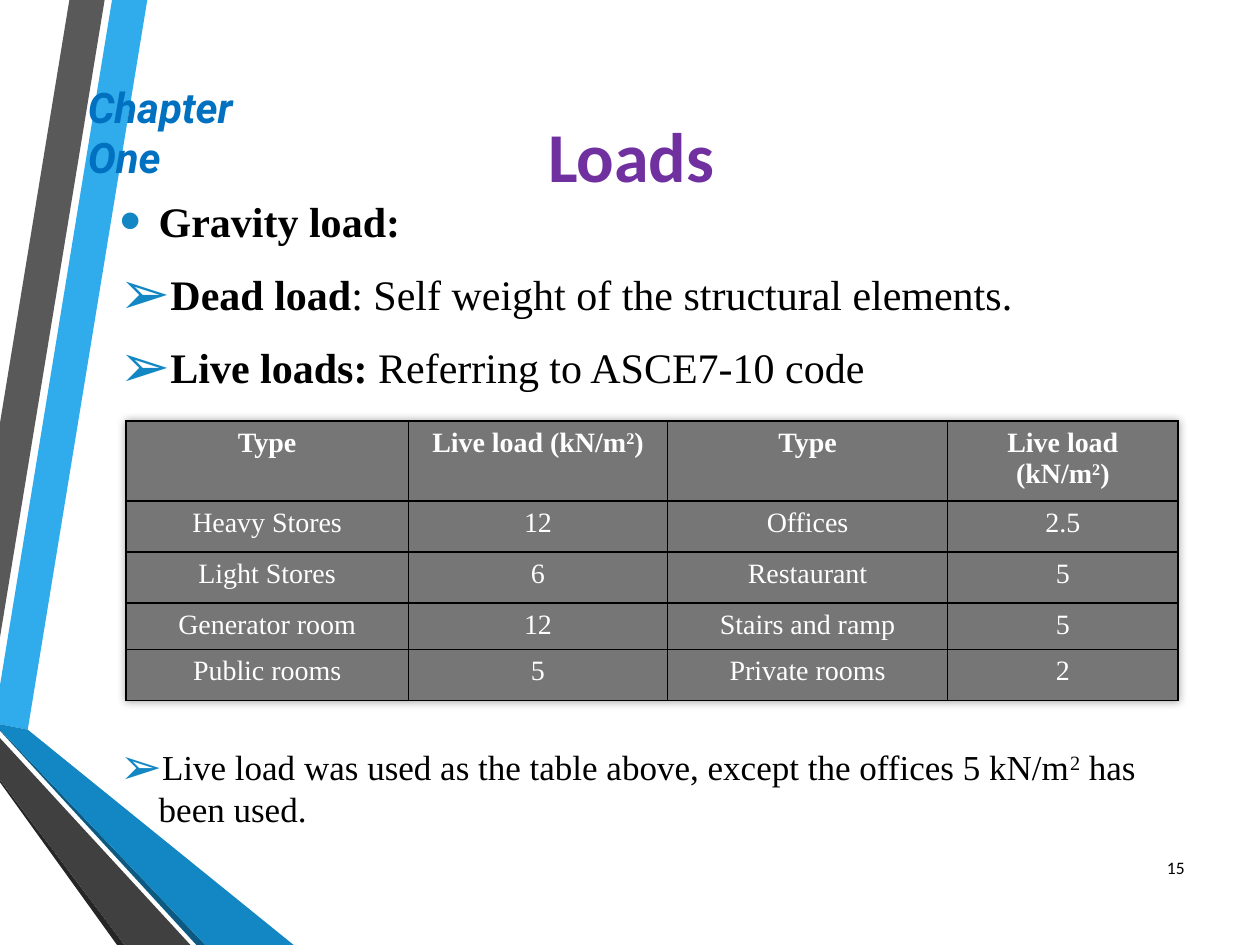
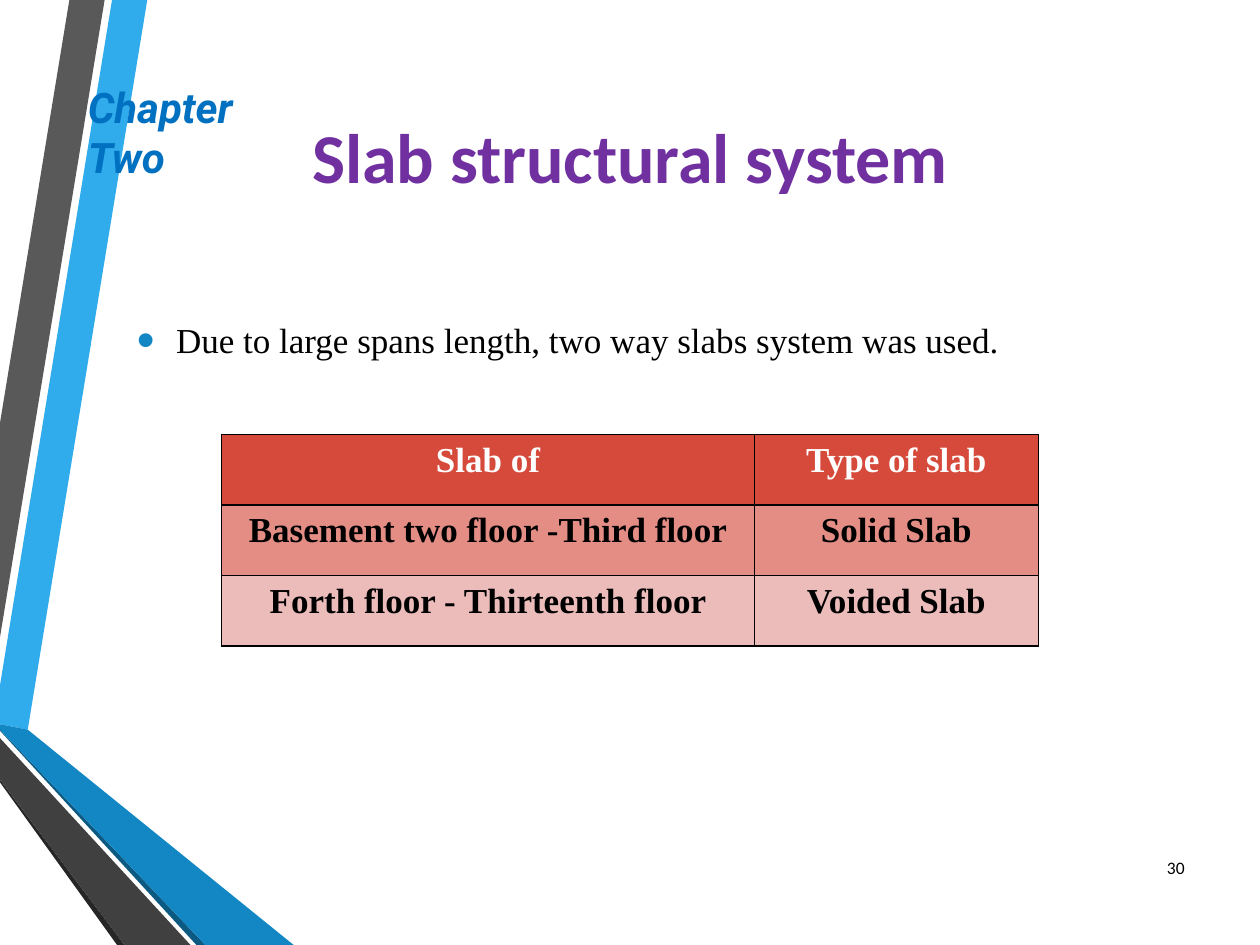
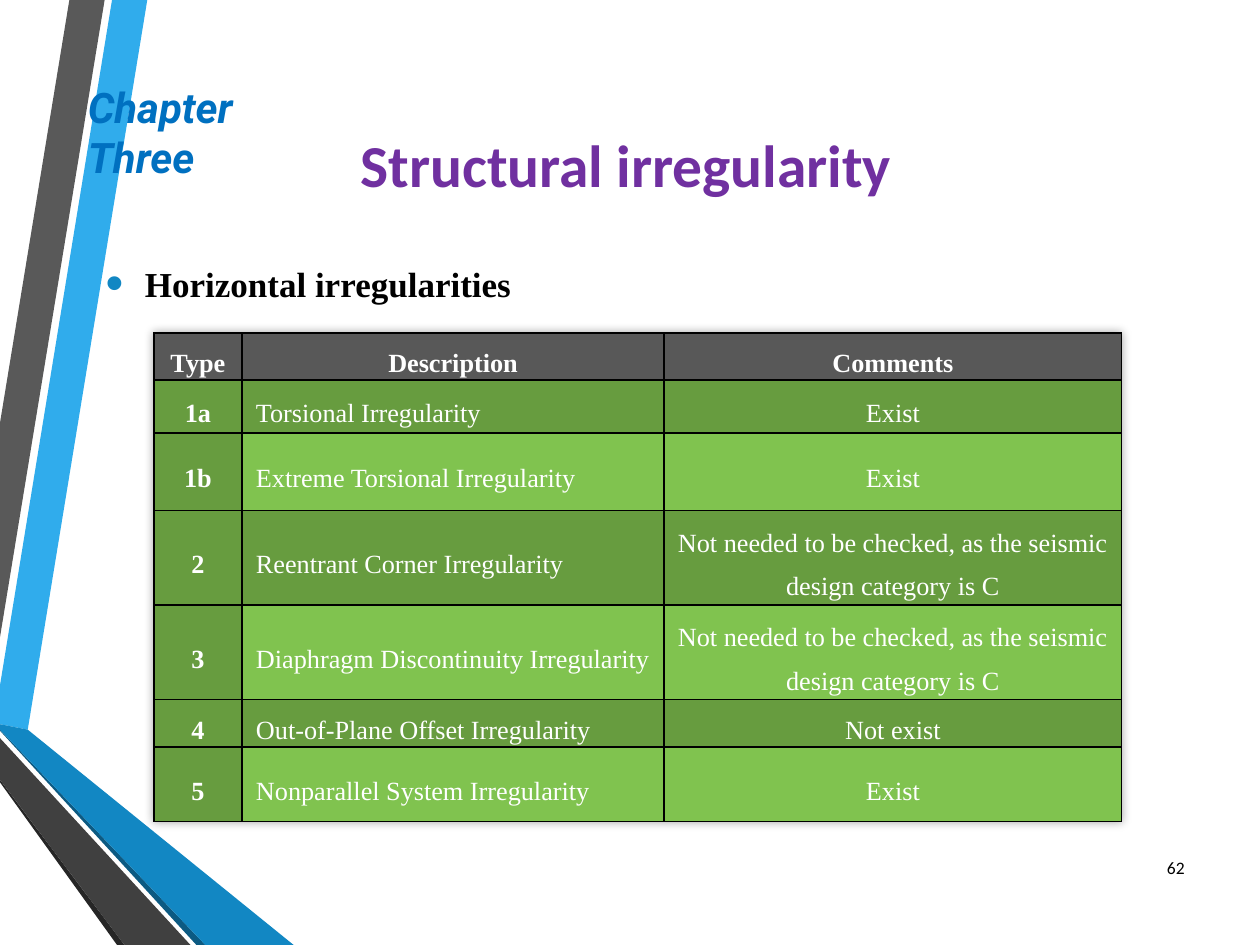
from dataclasses import dataclass, field
from typing import Any

from lxml.etree import SubElement
from pptx import Presentation
from pptx.dml.color import RGBColor
from pptx.enum.text import MSO_ANCHOR as Anchor, MSO_AUTO_SIZE as AutoSize, PP_ALIGN as Align
from pptx.oxml.ns import qn
from pptx.util import Cm, Pt


@dataclass(frozen=True)
class Theme:
    title_font: str = "Calibri"
    chapter_font: str = "Roboto"
    body_font: str = "Times New Roman"
    title: str = "7030A0"
    chapter: str = "0070C0"
    accent: str = "1287C3"
    ink: str = "000000"
    paper: str = "FFFFFF"
    sky: str = "30ACEC"
    deep_blue: str = "0C5A82"
    slate: str = "595959"
    charcoal: str = "404040"
    soot: str = "262626"
    load_grey: str = "767676"
    header_grey: str = "585858"
    red: str = "D64A3B"
    red_mid: str = "E38D85"
    red_light: str = "EBBCBA"
    green: str = "679C3F"
    green_light: str = "80C34F"
    title_size: int = 40
    long_title_size: int = 34
    heading_size: int = 24
    text_size: int = 20
    load_size: int = 16
    check_size: int = 15
    number_size: int = 10


@dataclass(frozen=True)
class Run:
    text: str
    bold: bool = False
    raised: bool = False


@dataclass(frozen=True)
class Cell:
    runs: list
    fill: str
    color: str
    align: Any = Align.CENTER


THEME = Theme()

BANDS = [
    (THEME.sky, [(0, 13.82), (0, 14.6), (0.56, 14.71), (2.97, 0), (2.26, 0)]),
    (THEME.slate, [(2.11, 0), (1.4, 0), (0, 8.53), (0, 12.85)]),
    (THEME.soot, [(0, 15.72), (0, 15.77), (2.36, 19.05), (2.51, 19.05)]),
    (THEME.deep_blue, [(0, 14.71), (0, 14.73), (3.96, 19.05), (4.14, 19.05)]),
    (THEME.accent, [(0, 14.71), (4.14, 19.05), (5.92, 19.05), (0.56, 14.71), (0, 14.6)]),
    (THEME.charcoal, [(0, 15.72), (2.51, 19.05), (3.84, 19.05), (0, 14.88)]),
]


@dataclass
class Deck:
    theme: Theme
    prs: Any
    slide: Any = None

    def new_slide(self, title, title_box, chapter, number, title_size=THEME.title_size):
        layout = self.prs.slide_layouts[5]
        self.slide = self.prs.slides.add_slide(layout)
        if len(self.prs.slides) == 1:
            self.bands(layout)
        self.title(title, title_box, title_size)
        self.chapter(chapter)
        self.number(number)

    def bands(self, layout):
        for order, (color, points) in enumerate(BANDS):
            corners = [(Cm(x), Cm(y)) for x, y in points]
            outline = self.slide.shapes.build_freeform(*corners[0], scale=1.0)
            outline.add_line_segments(corners[1:], close=True)
            band = outline.convert_to_shape()
            band.fill.solid()
            band.fill.fore_color.rgb = RGBColor.from_string(color)
            band.line.fill.background()
            band.shadow.inherit = False
            band.element.nvSpPr.cNvPr.set("id", str(100 + order))
            layout.shapes.element.insert(2 + order, band.element)

    def add_runs(self, paragraph, runs, font, size, color, italic=False):
        for part in runs:
            run = paragraph.add_run()
            run.text = part.text
            run.font.name = font
            run.font.size = Pt(size)
            run.font.bold = part.bold
            run.font.italic = italic
            run.font.color.rgb = RGBColor.from_string(color)
            if part.raised:
                run._r.get_or_add_rPr().set("baseline", "30000")

    def title(self, text, box, size):
        heading = self.slide.shapes.title
        heading.left, heading.top, heading.width, heading.height = map(Cm, box)
        frame = heading.text_frame
        frame.auto_size = AutoSize.NONE
        frame.vertical_anchor = Anchor.MIDDLE
        paragraph = frame.paragraphs[0]
        paragraph.alignment = Align.CENTER
        self.add_runs(paragraph, [Run(text, True)], self.theme.title_font, size, self.theme.title)

    def text_frame(self, box, anchor=Anchor.TOP):
        frame = self.slide.shapes.add_textbox(*map(Cm, box)).text_frame
        frame.word_wrap = True
        frame.vertical_anchor = anchor
        return frame

    def chapter(self, text):
        label = self.text_frame((1.52, 1.52, 3.84, 1.27)).paragraphs[0]
        self.add_runs(label, [Run(text, True)], self.theme.chapter_font,
                      self.theme.heading_size, self.theme.chapter, italic=True)

    def number(self, value):
        page = self.text_frame((22.94, 16.97, 1.19, 1.02), Anchor.MIDDLE).paragraphs[0]
        page.alignment = Align.RIGHT
        self.add_runs(page, [Run(str(value))], self.theme.title_font,
                      self.theme.number_size, self.theme.ink)

    def bullets(self, box, size, items):
        frame = self.text_frame(box)
        for index, (mark, runs) in enumerate(items):
            paragraph = frame.add_paragraph() if index else frame.paragraphs[0]
            self.bullet(paragraph, mark)
            if index < len(items) - 1:
                paragraph.space_after = Pt(13)
            self.add_runs(paragraph, runs, self.theme.body_font, size, self.theme.ink)

    def bullet(self, paragraph, mark):
        props = paragraph._p.get_or_add_pPr()
        indent = Cm(0.79)
        props.set("marL", str(indent))
        props.set("indent", str(-indent))
        SubElement(SubElement(props, qn("a:buClr")), qn("a:srgbClr"), val=self.theme.accent)
        SubElement(props, qn("a:buSzPct"), val="145000")
        SubElement(props, qn("a:buFont"), typeface="Arial")
        SubElement(props, qn("a:buChar"), char=mark)

    def table(self, corner, widths, heights, rows, size, compact=False, shadow=False):
        left, top = corner
        grid = self.slide.shapes.add_table(
            len(rows), len(widths), Cm(left), Cm(top), Cm(sum(widths)), Cm(sum(heights))).table
        for column, width in zip(grid.columns, widths):
            column.width = Cm(width)
        for line, height in zip(grid.rows, heights):
            line.height = Cm(height)
        for r, row in enumerate(rows):
            for c, content in enumerate(row):
                self.cell(grid.cell(r, c), content, size, compact)
        if shadow:
            self.table_shadow(grid)

    def cell(self, target, content, size, compact):
        target.fill.solid()
        target.fill.fore_color.rgb = RGBColor.from_string(content.fill)
        paragraph = target.text_frame.paragraphs[0]
        paragraph.alignment = content.align
        if compact:
            target.vertical_anchor = Anchor.MIDDLE
            target.margin_left = Cm(0.28 if content.align == Align.LEFT else 0.15)
            target.margin_right = Cm(0.15)
            target.margin_top = target.margin_bottom = 0
            paragraph.line_spacing = 1.5
            paragraph.space_after = Pt(6)
        self.add_runs(paragraph, content.runs, self.theme.body_font, size, content.color)
        self.borders(target)

    def borders(self, target):
        props = target._tc.get_or_add_tcPr()
        for order, side in enumerate(("lnL", "lnR", "lnT", "lnB")):
            edge = SubElement(props, qn(f"a:{side}"), w=str(Pt(1)))
            paint = SubElement(edge, qn("a:solidFill"))
            SubElement(paint, qn("a:srgbClr"), val=self.theme.ink)
            props.insert(order, edge)

    def table_shadow(self, grid):
        props = grid._tbl.tblPr
        effects = SubElement(props, qn("a:effectLst"))
        glow = SubElement(effects, qn("a:outerShdw"), blurRad=str(Pt(5)), dist="0", dir="0")
        color = SubElement(glow, qn("a:srgbClr"), val=self.theme.ink)
        SubElement(color, qn("a:alpha"), val="35000")
        props.insert(0, effects)


def loads_slide(deck):
    theme = deck.theme
    deck.new_slide("Loads", (3.28, 1.73, 18.9, 2.77), "Chapter One", 15)
    deck.bullets((2.16, 3.81, 22.33, 4.4), theme.heading_size, [
        ("•", [Run("Gravity load:", True)]),
        ("➢", [Run("Dead load", True), Run(": Self weight of the structural elements.")]),
        ("➢", [Run("Live loads: ", True), Run("Referring to ASCE7-10 code")]),
    ])
    header = [[Run("Type", True)],
              [Run("Live load (kN/m", True), Run("2", True, True), Run(")", True)]] * 2
    loads = [
        ("Heavy Stores", "12", "Offices", "2.5"),
        ("Light Stores", "6", "Restaurant", "5"),
        ("Generator room", "12", "Stairs and ramp", "5"),
        ("Public rooms", "5", "Private rooms", "2"),
    ]
    contents = [header] + [[[Run(value)] for value in row] for row in loads]
    rows = [[Cell(runs, theme.load_grey, theme.paper) for runs in row] for row in contents]
    deck.table((2.54, 8.49), [5.69, 5.23, 5.64, 4.65], [1.5, 1.03, 1.03, 0.89, 1.03],
               rows, theme.load_size, shadow=True)
    deck.bullets((2.16, 14.91, 22.33, 2), theme.text_size, [
        ("➢", [Run("Live load was used as the table above, except the offices 5 kN/m"),
               Run("2", raised=True), Run(" has been used.")]),
    ])


def slab_slide(deck):
    theme = deck.theme
    deck.new_slide("Slab structural system", (1.75, 1.02, 21.9, 4.22), "Chapter Two", 30)
    deck.bullets((2.51, 6.3, 21.13, 1.1), theme.text_size, [
        ("•", [Run("Due to large spans length, two way slabs system was used.")]),
    ])
    slabs = [
        (theme.red, theme.paper, ("Slab of", "Type of slab")),
        (theme.red_mid, theme.ink, ("Basement two floor -Third floor", "Solid Slab")),
        (theme.red_light, theme.ink, ("Forth floor - Thirteenth floor", "Voided Slab")),
    ]
    rows = [[Cell([Run(text, True)], fill, color) for text in texts]
            for fill, color, texts in slabs]
    deck.table((4.47, 8.76), [10.74, 5.72], [1.42] * 3, rows, theme.text_size)


def irregularity_slide(deck):
    theme = deck.theme
    deck.new_slide("Structural irregularity", (0.9, 2.13, 23.44, 2.34), "Chapter Three", 62,
                   theme.long_title_size)
    deck.bullets((1.88, 5.16, 21.64, 1.1), theme.text_size, [
        ("•", [Run("Horizontal irregularities", True)]),
    ])
    unchecked = "Not needed to be checked, as the seismic design category is C"
    checks = [
        ("1a", "Torsional Irregularity", "Exist"),
        ("1b", "Extreme Torsional Irregularity", "Exist"),
        ("2", "Reentrant Corner Irregularity", unchecked),
        ("3", "Diaphragm Discontinuity Irregularity", unchecked),
        ("4", "Out-of-Plane Offset Irregularity", "Not exist"),
        ("5", "Nonparallel System Irregularity", "Exist"),
    ]
    rows = [[Cell([Run(text, True)], theme.header_grey, theme.paper)
             for text in ("Type", "Description", "Comments")]]
    for index, (kind, description, comment) in enumerate(checks):
        fill = theme.green_light if index % 2 else theme.green
        rows.append([
            Cell([Run(kind, True)], theme.green, theme.paper),
            Cell([Run(description)], fill, theme.paper, Align.LEFT),
            Cell([Run(comment)], fill, theme.paper),
        ])
    deck.table((3.1, 6.71), [1.78, 8.51, 9.22], [0.87, 1.07, 1.56, 1.85, 1.75, 0.87, 1.5],
               rows, theme.check_size, compact=True, shadow=True)


def main():
    prs = Presentation()
    prs.slide_width, prs.slide_height = Cm(25.4), Cm(19.05)
    deck = Deck(THEME, prs)
    loads_slide(deck)
    slab_slide(deck)
    irregularity_slide(deck)
    prs.save("out.pptx")


if __name__ == "__main__":
    main()
